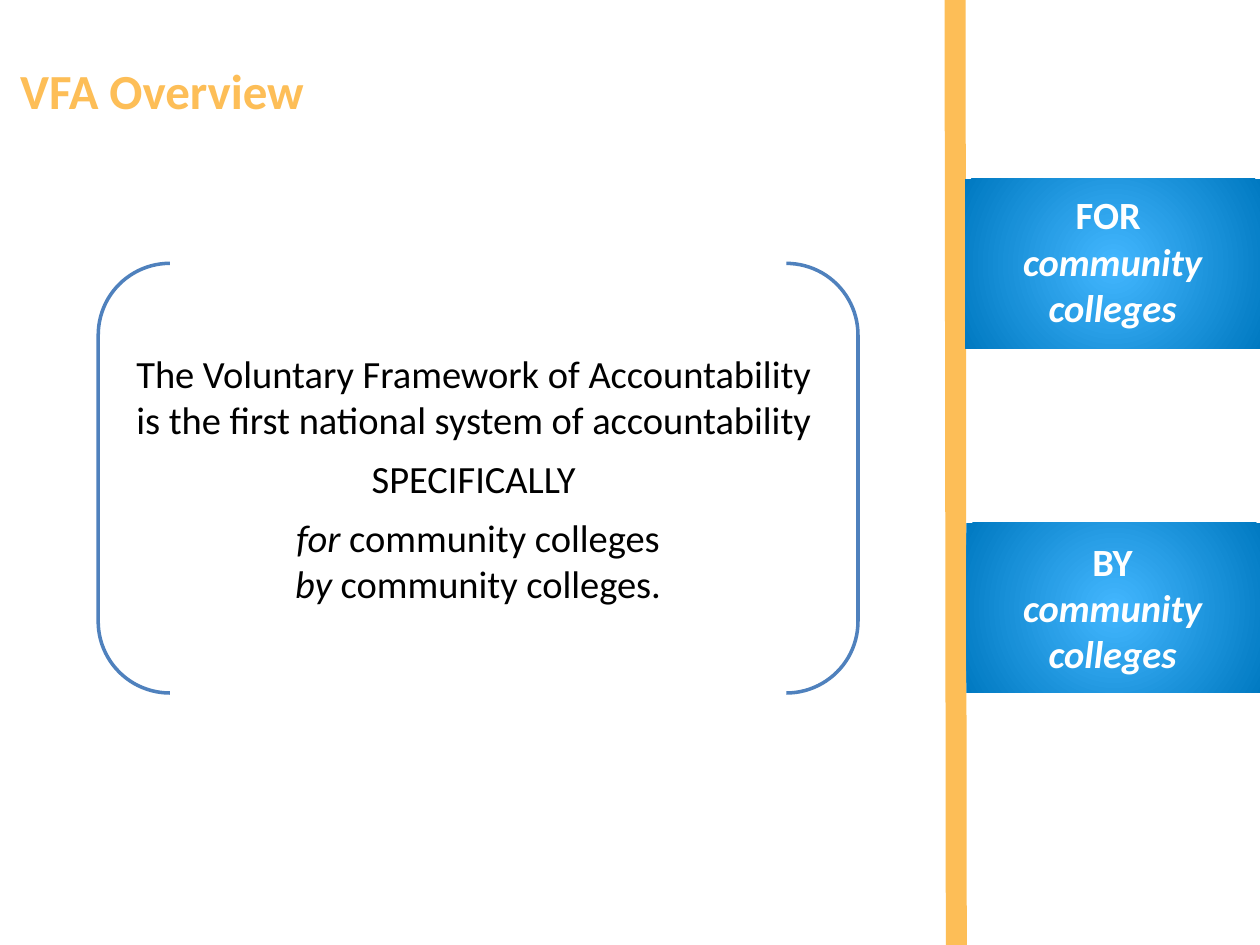
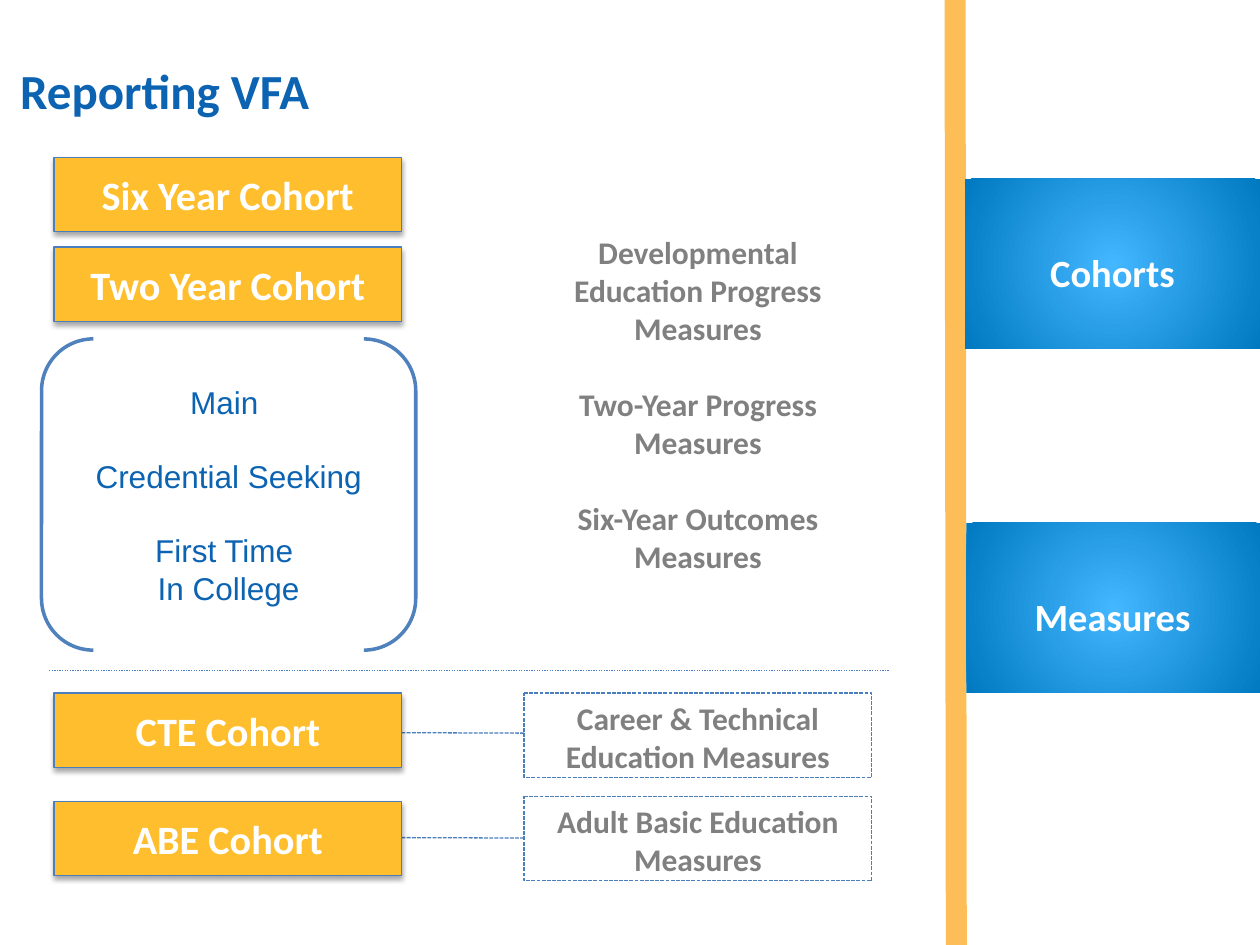
"""Build two slides on the Voluntary Framework of Accountability."""
from lxml import etree
from pptx import Presentation
from pptx.dml.color import RGBColor
from pptx.enum import dml, shapes, text
from pptx.oxml import parse_xml
from pptx.oxml.ns import nsdecls, qn
from pptx.util import Inches, Pt

WHITE = RGBColor(0xFF, 0xFF, 0xFF)
BLACK = RGBColor(0, 0, 0)
GRAY = RGBColor(0x80, 0x80, 0x80)
GOLD = RGBColor(0xFD, 0xBE, 0x57)
AMBER = RGBColor(0xFF, 0xBE, 0x2E)
BLUE = RGBColor(0x0B, 0x63, 0xB2)
BRACKET_BLUE = RGBColor(0x4F, 0x81, 0xBD)
EDGE_BLUE = RGBColor(0x4B, 0x7E, 0xBC)
TAB_COLORS = (RGBColor(0x43, 0xB7, 0xFF), RGBColor(0, 0x79, 0xC1))

SHAPE = shapes.MSO_SHAPE
TOP, MIDDLE, BOTTOM = (text.MSO_ANCHOR.TOP, text.MSO_ANCHOR.MIDDLE,
                       text.MSO_ANCHOR.BOTTOM)

# A paragraph is (runs, space before); a run is (words, italic).
OVERVIEW = {
    "title": ("VFA Overview", GOLD),
    "tabs": [([("FOR \n", False), ("community colleges", True)], 1.47),
             ([("BY\n", False), ("community colleges", True)], 4.22)],
    "label_height": 1.21,
}
MISSION = [
    ([("The Voluntary Framework of Accountability ", False)], 0),
    ([("is the first national system of accountability ", False)], 0),
    ([("SPECIFICALLY ", False)], 7.3),
    ([("for ", True), ("community colleges", False)], 7.3),
    ([("by ", True), ("community colleges.", False)], 0),
]
REPORTING = {
    "title": ("Reporting VFA", BLUE),
    "tabs": [([("Cohorts", False)], 1.93), ([("Measures", False)], 4.66)],
    "label_height": 0.47,
}
COHORTS = [("Six Year Cohort", 1.25), ("Two Year Cohort", 1.96),
           ("CTE Cohort", 5.5), ("ABE Cohort", 6.36)]
GROUPS = [
    ([("Main ", False)], 0),
    ([("Credential Seeking", False)], 20.7),
    ([("First Time ", False)], 20.7),
    ([("In College", False)], 0),
]
MEASURES = [
    ([("Developmental Education Progress Measures", False)], 0),
    ([("Two-Year Progress Measures", False)], 22),
    ([("Six-Year Outcomes Measures", False)], 22),
]
CALLOUTS = [("Career & Technical Education Measures", 5.5, 0.476),
            ("Adult Basic Education Measures", 6.32, 0.495)]

TAB_LEFT, TAB_WIDTH, TAB_HEIGHT = 7.66, 2.35, 1.35
TAB_TOPS = (1.42, 4.15)
COHORT_LEFT, MEASURE_LEFT, BOX_WIDTH = 0.43, 4.16, 2.76


def box(left, top, width, height):
    return [Inches(value) for value in (left, top, width, height)]


def write(shape, paragraphs, *, size, color, font="Calibri", bold=False,
          anchor=TOP, align=text.PP_ALIGN.CENTER, spacing=None, margin=None):
    """Fill a shape with formatted paragraphs; a plain string is one paragraph."""
    if isinstance(paragraphs, str):
        paragraphs = [([(paragraphs, False)], 0)]
    frame = shape.text_frame
    frame.word_wrap = True
    frame.auto_size = text.MSO_AUTO_SIZE.NONE
    frame.vertical_anchor = anchor
    if margin is not None:
        frame.margin_left = frame.margin_right = margin
        frame.margin_top = frame.margin_bottom = margin
    for index, (runs, before) in enumerate(paragraphs):
        paragraph = frame.add_paragraph() if index else frame.paragraphs[0]
        paragraph.alignment = align
        if before:
            paragraph.space_before = Pt(before)
        if spacing:
            paragraph.line_spacing = spacing
        for words, italic in runs:
            run = paragraph.add_run()
            run.text = words.rstrip("\n")
            run.font.name, run.font.size = font, Pt(size)
            run.font.bold, run.font.italic = bold, italic
            run.font.color.rgb = color
            if words.endswith("\n"):
                paragraph.add_line_break()


def set_line(line, color, width, dash=None):
    line.color.rgb = color
    line.width = Pt(width)
    if dash:
        line.dash_style = dash


def add_shape(slide, kind, area, *, fill=None, line=None, shadow=False):
    shape = slide.shapes.add_shape(kind, *box(*area))
    shape.shadow.inherit = False
    if fill is None:
        shape.fill.background()
    else:
        shape.fill.solid()
        shape.fill.fore_color.rgb = fill
    if line:
        set_line(shape.line, *line)
    else:
        shape.line.fill.background()
    if shadow:
        effects = shape._element.spPr.find(qn("a:effectLst"))
        effects.append(parse_xml(
            f'<a:outerShdw {nsdecls("a")} blurRad="{Pt(3.1)}" dist="{Pt(1.8)}" '
            'dir="5400000" rotWithShape="0"><a:srgbClr val="000000">'
            '<a:alpha val="35000"/></a:srgbClr></a:outerShdw>'))
    return shape


def add_line(slide, start, end, *line):
    connector = slide.shapes.add_connector(
        shapes.MSO_CONNECTOR.STRAIGHT, *box(*start, *end))
    set_line(connector.line, *line)
    etree.SubElement(connector._element.spPr, qn("a:effectLst"))


def add_text(slide, area, paragraphs, **style):
    write(slide.shapes.add_textbox(*box(*area)), paragraphs, **style)


def add_tab(slide, left, top):
    tab = add_shape(slide, SHAPE.RECTANGLE, (left, top, TAB_WIDTH, TAB_HEIGHT))
    tab.fill.gradient()
    for stop, color in zip(tab.fill.gradient_stops, TAB_COLORS):
        stop.color.rgb = color
    gradient = tab._element.spPr.find(qn("a:gradFill"))
    gradient.replace(gradient.find(qn("a:lin")), parse_xml(
        f'<a:path {nsdecls("a")} path="circle"><a:fillToRect l="50000" '
        't="50000" r="50000" b="50000"/></a:path>'))


def add_base_slide(presentation, content):
    """Add a slide with the title, side panel, gold bar and labelled tabs."""
    slide = presentation.slides.add_slide(presentation.slide_layouts[5])
    title = slide.shapes.title
    title.left, title.top, title.width, title.height = box(0.16, 0.07, 7.69, 0.88)
    words, color = content["title"]
    write(title, words, size=28, color=color, bold=True, anchor=BOTTOM,
          align=text.PP_ALIGN.LEFT, spacing=0.9, margin=0)
    add_shape(slide, SHAPE.RECTANGLE, (TAB_LEFT, 0, 2.34, 7.5),
              fill=WHITE, shadow=True)
    add_line(slide, (7.58, 0), (7.59, 7.5), GOLD, 12)
    for index, (top, (runs, label_top)) in enumerate(zip(TAB_TOPS, content["tabs"])):
        add_tab(slide, TAB_LEFT + index * 0.01, top)
        add_text(slide, (TAB_LEFT, label_top, 2.34, content["label_height"]),
                 [(runs, 0)], size=22, color=WHITE, bold=True)
    return slide


def add_bracket(slide, area, paragraphs, **style):
    bracket = add_shape(slide, SHAPE.DOUBLE_BRACKET, area, line=(BRACKET_BLUE, 2))
    write(bracket, paragraphs, anchor=MIDDLE, **style)


def build_overview(presentation):
    slide = add_base_slide(presentation, OVERVIEW)
    add_bracket(slide, (0.78, 2.09, 6.03, 3.41), MISSION, size=22, color=BLACK)


def build_reporting(presentation):
    slide = add_base_slide(presentation, REPORTING)
    measure_style = dict(size=18, color=GRAY, bold=True)
    add_bracket(slide, (0.33, 2.69, 2.97, 2.47), GROUPS,
                size=18, color=BLUE, font="Arial")
    add_text(slide, (MEASURE_LEFT, 1.25, BOX_WIDTH, 3.91), MEASURES,
             anchor=MIDDLE, **measure_style)
    for words, top, level in CALLOUTS:
        callout = add_shape(slide, SHAPE.LINE_CALLOUT_1,
                            (MEASURE_LEFT, top, BOX_WIDTH, 0.67),
                            line=(EDGE_BLUE, 0.75, dml.MSO_LINE.SQUARE_DOT))
        for index, value in enumerate((level, 0, level - 0.005, -0.355)):
            callout.adjustments[index] = value
        write(callout, words, **measure_style)
    for words, top in COHORTS:
        cohort = add_shape(slide, SHAPE.RECTANGLE,
                           (COHORT_LEFT, top, BOX_WIDTH, 0.59),
                           fill=AMBER, line=(EDGE_BLUE, 0.75), shadow=True)
        write(cohort, words, size=23, color=WHITE, bold=True, anchor=MIDDLE)
    add_line(slide, (0.39, 5.32), (7.06, 5.32), EDGE_BLUE, 0.75,
             dml.MSO_LINE.ROUND_DOT)


def main():
    presentation = Presentation()
    presentation.slide_width, presentation.slide_height = Inches(10), Inches(7.5)
    build_overview(presentation)
    build_reporting(presentation)
    presentation.save("out.pptx")


if __name__ == "__main__":
    main()
